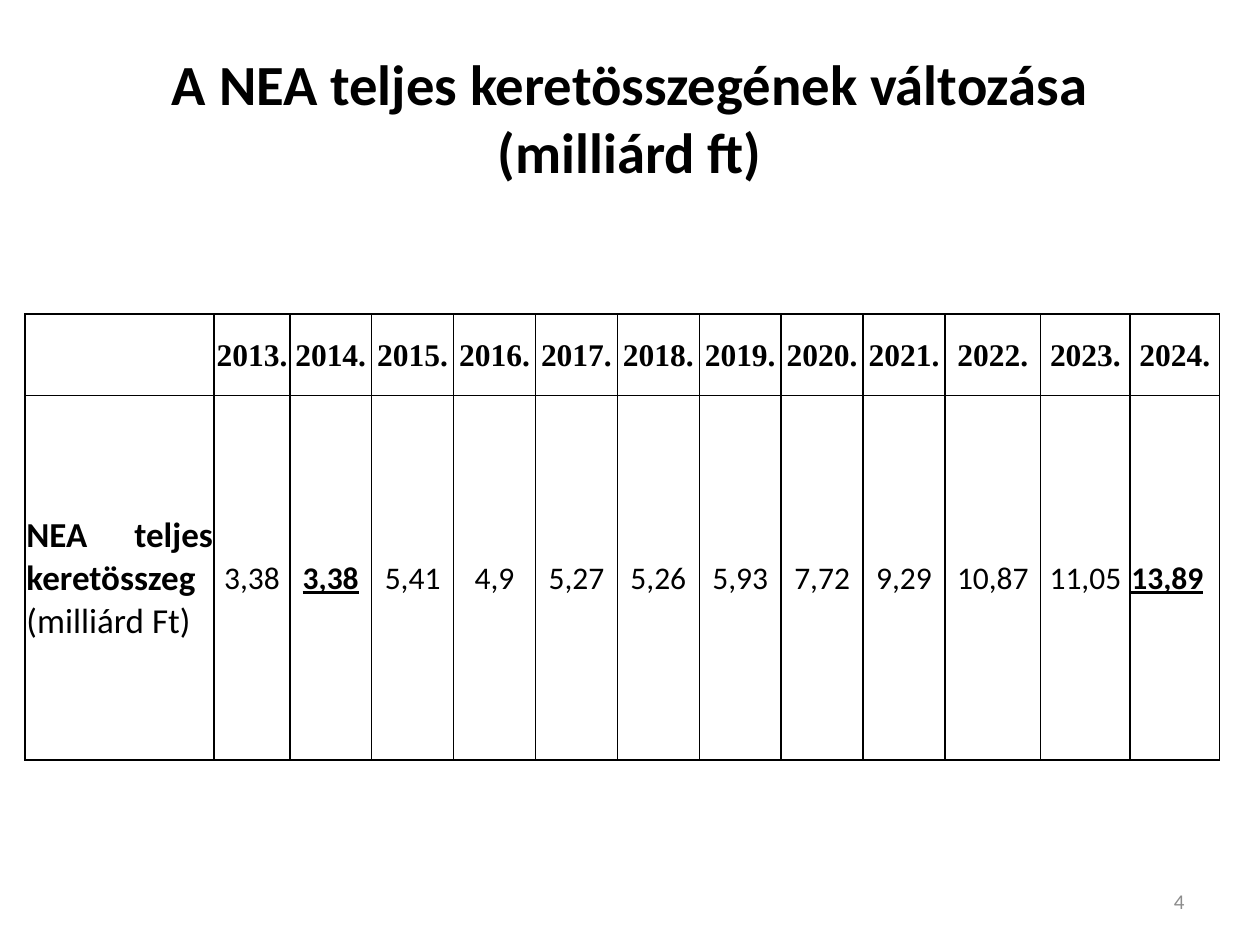
from lxml.etree import SubElement
from pptx import Presentation
from pptx.dml.color import RGBColor
from pptx.enum.text import MSO_ANCHOR, PP_ALIGN
from pptx.oxml.ns import qn
from pptx.util import Inches, Pt

COLORS = {"text": "000000", "paper": "FFFFFF", "border": "000000", "number": "8C8C8C"}
BUDGETS = {
    "2013.": "3,38", "2014.": "3,38", "2015.": "5,41", "2016.": "4,9",
    "2017.": "5,27", "2018.": "5,26", "2019.": "5,93", "2020.": "7,72",
    "2021.": "9,29", "2022.": "10,87", "2023.": "11,05", "2024.": "13,89",
}
HIGHLIGHTED = ("2014.", "2024.")
COLUMN_WIDTHS = [1.5, 0.6] + [0.65] * 8 + [0.76, 0.71, 0.71]
ROW_HEIGHTS = [0.65, 2.89]


def add_text(tf, text, size=18, font="Calibri", color="text", bold=False,
             underline=False, align=PP_ALIGN.CENTER):
    p = tf.paragraphs[0]
    p.alignment = align
    r = p.add_run()
    r.text = text
    r.font.size = Pt(size)
    r.font.name = font
    r.font.bold = bold
    r.font.underline = underline
    r.font.color.rgb = RGBColor.from_string(COLORS[color])


def add_text_box(slide, box, text, **fmt):
    tf = slide.shapes.add_textbox(*map(Inches, box)).text_frame
    tf.word_wrap = True
    tf.vertical_anchor = MSO_ANCHOR.MIDDLE
    add_text(tf, text, **fmt)


def style_cell(cell):
    cell.vertical_anchor = MSO_ANCHOR.MIDDLE
    cell.margin_left = cell.margin_right = cell.margin_top = Inches(0.01)
    cell.margin_bottom = 0
    tc_pr = cell._tc.get_or_add_tcPr()
    for side in ("a:lnL", "a:lnR", "a:lnT", "a:lnB"):
        ln = SubElement(tc_pr, qn(side), w=str(Pt(1)))
        fill = SubElement(ln, qn("a:solidFill"))
        SubElement(fill, qn("a:srgbClr"), val=COLORS["border"])
    cell.fill.solid()
    cell.fill.fore_color.rgb = RGBColor.from_string(COLORS["paper"])


def add_budget_table(slide, box):
    table = slide.shapes.add_table(
        len(ROW_HEIGHTS), len(COLUMN_WIDTHS), *map(Inches, box)).table
    table.first_row = table.horz_banding = False
    for column, width in zip(table.columns, COLUMN_WIDTHS):
        column.width = Inches(width)
    for row, height in zip(table.rows, ROW_HEIGHTS):
        row.height = Inches(height)
    for cell in table.iter_cells():
        style_cell(cell)

    label = table.cell(1, 0).text_frame
    add_text(label, "NEA teljes keretösszeg ", size=20, bold=True, align=PP_ALIGN.JUSTIFY)
    add_text(label, "(milliárd Ft)", size=20, align=PP_ALIGN.JUSTIFY)
    for col, (year, amount) in enumerate(BUDGETS.items(), 1):
        add_text(table.cell(0, col).text_frame, year, font="Times New Roman", bold=True)
        marked = year in HIGHLIGHTED
        align = PP_ALIGN.LEFT if col == len(BUDGETS) else PP_ALIGN.CENTER
        add_text(table.cell(1, col).text_frame, amount, bold=marked,
                 underline=marked, align=align)


def main():
    prs = Presentation()
    prs.slide_width, prs.slide_height = Inches(10), Inches(7.5)
    s = prs.slides.add_slide(prs.slide_layouts[6])
    add_text_box(s, (0.5, 0.3, 9, 1.25),
                 "A NEA teljes keretösszegének változása (milliárd ft)",
                 size=32.4, bold=True)
    add_budget_table(s, (0.2, 2.49, sum(COLUMN_WIDTHS), sum(ROW_HEIGHTS)))
    add_text_box(s, (7.17, 6.95, 2.33, 0.4), "4", size=12, color="number",
                 align=PP_ALIGN.RIGHT)
    prs.save("out.pptx")


if __name__ == "__main__":
    main()
